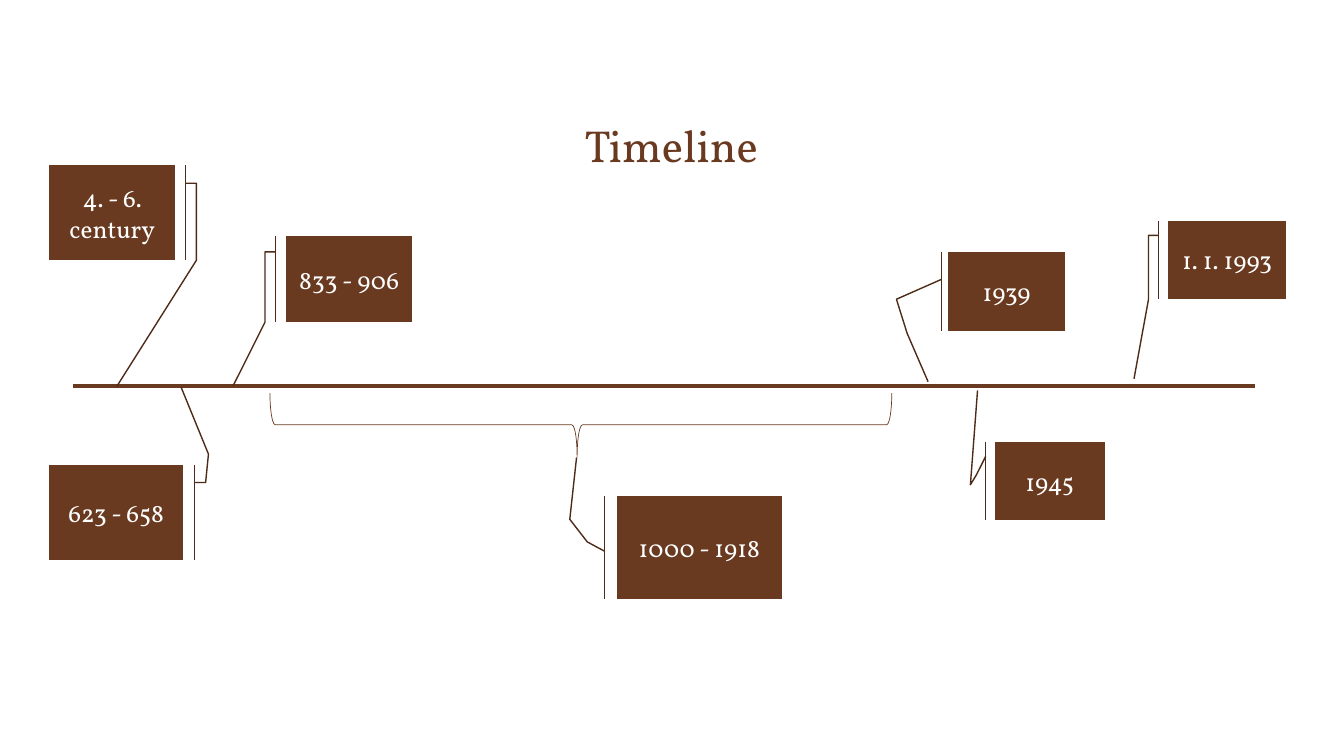
"""Build a timeline slide with callouts above and below a central axis."""
from lxml import etree
from pptx import Presentation
from pptx.dml.color import RGBColor
from pptx.enum import shapes, text
from pptx.oxml import ns
from pptx.util import Cm, Pt

HEADING = "Timeline"
FONT = "Vollkorn"
BROWN, DARK_BROWN, WHITE = "6A3A20", "4E2B18", "FFFFFF"

HEADING_FRAME = (3.38, 1.19, 27.08, 3.25)
AXIS_START, AXIS_END, AXIS_Y = 1.85, 31.62, 9.73
ERA_BRACE = (13.84, 2.87, 1.6, 15.67)

# label, frame in cm, mirrored, leader points as (y, x) shares of the frame
EVENTS = [
    ("4. - 6. century", (1.24, 4.17, 3.18, 2.39), True,
     [(0.188, -0.083), (0.188, -0.167), (1, -0.167), (2.332, 0.465)]),
    ("623 - 658", (1.24, 11.71, 3.38, 2.39), True,
     [(0.188, -0.083), (0.188, -0.167), (-0.112, -0.188), (-0.82, 0.017)]),
    ("833 - 906", (7.21, 5.94, 3.18, 2.18), False,
     [(0.188, -0.083), (0.188, -0.167), (1, -0.167), (1.736, -0.42)]),
    ("1000 - 1918", (15.54, 12.5, 4.17, 2.59), False,
     [(0.537, -0.073), (0.447, -0.177), (0.227, -0.283), (-0.376, -0.242)]),
    ("1939", (23.88, 6.35, 2.97, 1.98), False,
     [(0.35, -0.054), (0.602, -0.434), (1.036, -0.343), (1.652, -0.165)]),
    ("1945", (25.07, 11.13, 2.77, 1.98), False,
     [(0.188, -0.083), (0.422, -0.167), (0.549, -0.222), (-0.653, -0.157)]),
    ("1. 1. 1993", (29.44, 5.56, 2.97, 1.98), False,
     [(0.188, -0.083), (0.188, -0.167), (1, -0.167), (2.013, -0.29)]),
]


def colour(value):
    return RGBColor.from_string(value)


def write(frame, words, size, hue, anchor):
    frame.text = words
    frame.word_wrap = True
    frame.vertical_anchor = anchor
    paragraph = frame.paragraphs[0]
    paragraph.alignment = text.PP_ALIGN.CENTER
    paragraph.font.name = FONT
    paragraph.font.size = Pt(size)
    paragraph.font.color.rgb = colour(hue)


def draw_line(line, hue, width):
    line.color.rgb = colour(hue)
    line.width = Pt(width)


def add_heading(slide):
    heading = slide.shapes.title
    heading.left, heading.top, heading.width, heading.height = map(Cm, HEADING_FRAME)
    write(heading.text_frame, HEADING, 32, BROWN, text.MSO_ANCHOR.BOTTOM)


def add_axis(slide):
    axis = slide.shapes.add_connector(
        shapes.MSO_CONNECTOR.STRAIGHT,
        Cm(AXIS_START), Cm(AXIS_Y), Cm(AXIS_END), Cm(AXIS_Y))
    draw_line(axis.line, BROWN, 3)
    etree.SubElement(axis._element.spPr, ns.qn("a:effectLst"))


def add_brace(slide):
    brace = slide.shapes.add_shape(shapes.MSO_SHAPE.LEFT_BRACE, *map(Cm, ERA_BRACE))
    brace.rotation = 270
    brace.adjustments[0], brace.adjustments[1] = 0.083, 0.494
    brace.shadow.inherit = False
    brace.fill.background()
    draw_line(brace.line, BROWN, 0.5)


def add_event(slide, label, frame, mirrored, leader):
    event = slide.shapes.add_shape(
        shapes.MSO_SHAPE.LINE_CALLOUT_3_ACCENT_BAR, *map(Cm, frame))
    for index, share in enumerate(sum(leader, ())):
        event.adjustments[index] = share
    if mirrored:
        event._element.spPr.xfrm.set("flipH", "1")
    event.shadow.inherit = False
    event.fill.solid()
    event.fill.fore_color.rgb = colour(BROWN)
    draw_line(event.line, DARK_BROWN, 1)
    write(event.text_frame, label, 18, WHITE, text.MSO_ANCHOR.MIDDLE)


def main():
    deck = Presentation()
    deck.slide_width, deck.slide_height = Cm(33.87), Cm(19.05)
    slide = deck.slides.add_slide(deck.slide_layouts.get_by_name("Title Only"))
    add_heading(slide)
    add_axis(slide)
    add_brace(slide)
    for event in EVENTS:
        add_event(slide, *event)
    deck.save("out.pptx")


if __name__ == "__main__":
    main()
